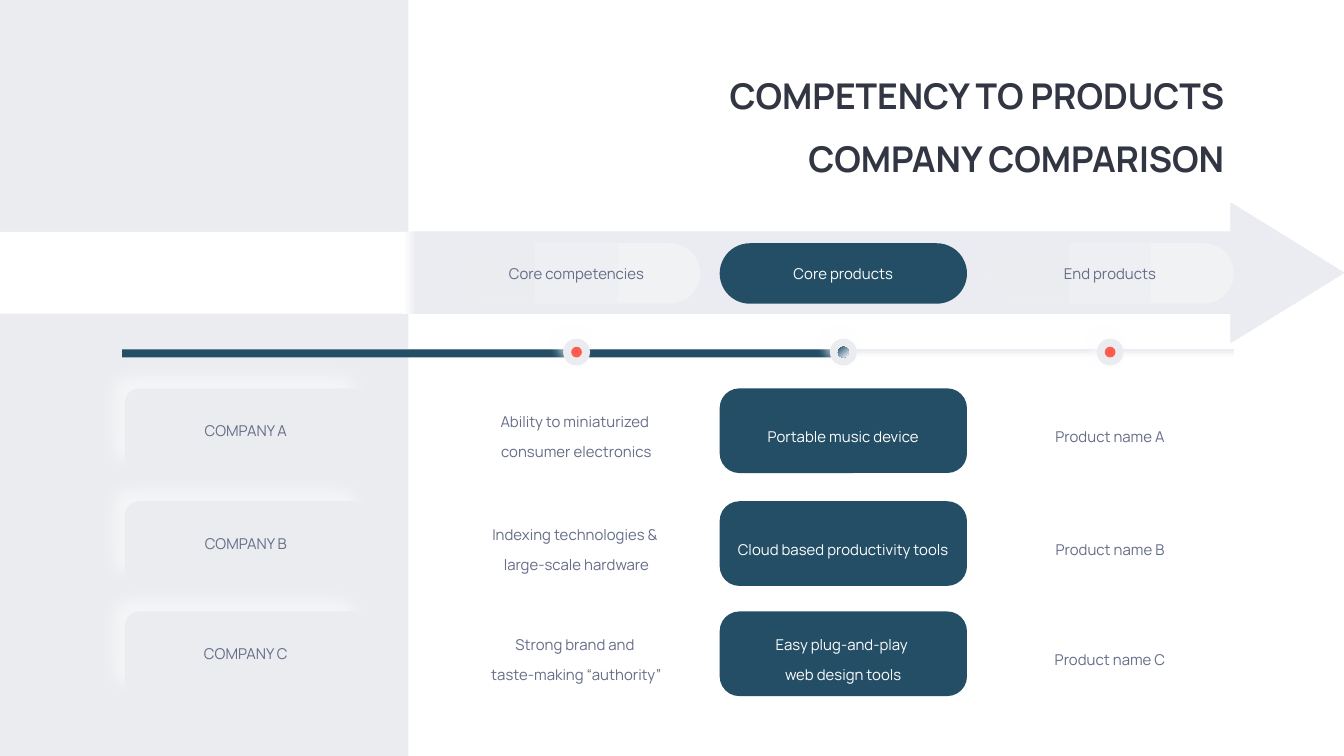
import collections

import lxml.etree
import pptx
import pptx.dml.color
import pptx.enum.shapes
import pptx.enum.text
import pptx.oxml.ns
import pptx.util

Box = collections.namedtuple("Box", "left top width height")
SHAPE = pptx.enum.shapes.MSO_SHAPE
ALIGN = pptx.enum.text.PP_ALIGN
ANCHOR = pptx.enum.text.MSO_ANCHOR
qn = pptx.oxml.ns.qn

FONT = "Manrope"
WHITE, GREY, PALE = "FFFFFF", "EBECF0", "F1F2F4"
NAVY, CORAL, SLATE, INK = "234E65", "FF5C4D", "656C87", "323643"

SLIDE = Box(0, 0, 10, 10 * 9 / 16)
COLUMN_LEFT, COLUMN_STEP, COLUMN_WIDTH = 3.37, 1.985, 1.84
ROW_TOPS, ROW_HEIGHT = (2.89, 3.73, 4.55), 0.63
HIGHLIGHT = 1
RIGHT = 9.18

STAGES = ("Core competencies", "Core products", "End products")
COMPANIES = {
    "COMPANY A": ("Ability to miniaturized \nconsumer electronics",
                  "Portable music device", "Product name A"),
    "COMPANY B": ("Indexing technologies & \nlarge-scale hardware",
                  "Cloud based productivity tools", "Product name B"),
    "COMPANY C": ("Strong brand and \ntaste-making “authority”",
                  "Easy plug-and-play \nweb design tools", "Product name C"),
}


def rgb(color):
    return pptx.dml.color.RGBColor.from_string(color)


def inches(box):
    return [pptx.util.Inches(value) for value in box]


def column_box(index, top, height):
    return Box(COLUMN_LEFT + index * COLUMN_STEP, top, COLUMN_WIDTH, height)


def add_form(shapes, kind, box, color=None, adjustments=()):
    form = shapes.add_shape(kind, *inches(box))
    form.shadow.inherit = False
    form.line.fill.background()
    if color:
        form.fill.solid()
        form.fill.fore_color.rgb = rgb(color)
    for index, value in enumerate(adjustments):
        form.adjustments[index] = value
    return form


def fill_gradient(form, stops, angle):
    """Fill with (percent, colour) stops; the angle runs clockwise."""
    form.fill.gradient()
    gradient = form._element.spPr.find(qn("a:gradFill"))
    stop_list = gradient.find(qn("a:gsLst"))
    for stop in list(stop_list):
        stop_list.remove(stop)
    for percent, color in stops:
        stop = lxml.etree.SubElement(stop_list, qn("a:gs"), pos=str(percent * 1000))
        lxml.etree.SubElement(stop, qn("a:srgbClr"), val=color)
    gradient.find(qn("a:lin")).set("ang", str(angle * 60000))


def add_glow(form, blur, distance):
    """Cast a white shadow towards the upper left."""
    effects = form._element.spPr.find(qn("a:effectLst"))
    shadow = lxml.etree.SubElement(
        effects, qn("a:outerShdw"), blurRad=str(pptx.util.Pt(blur)),
        dist=str(pptx.util.Pt(distance)), dir=str(225 * 60000),
        algn="br", rotWithShape="0")
    color = lxml.etree.SubElement(shadow, qn("a:srgbClr"), val=WHITE)
    lxml.etree.SubElement(color, qn("a:alpha"), val="56000")


def write(form, text, color, size=8, align=ALIGN.CENTER, spacing=None,
          bold=False, anchor=ANCHOR.MIDDLE):
    frame = form.text_frame
    frame.text = text
    frame.word_wrap = True
    frame.vertical_anchor = anchor
    frame.margin_left = frame.margin_right = pptx.util.Inches(0.07)
    frame.margin_top = frame.margin_bottom = pptx.util.Inches(0.04)
    for paragraph in frame.paragraphs:
        paragraph.alignment = align
        paragraph.line_spacing = spacing
        for span in paragraph.runs:
            span.font.name = FONT
            span.font.size = pptx.util.Pt(size)
            span.font.bold = bold
            span.font.color.rgb = rgb(color)


def add_title(page, box):
    title = page.shapes.add_textbox(*inches(box))
    write(title, "COMPETENCY TO PRODUCTS COMPANY COMPARISON", INK, size=19,
          align=ALIGN.RIGHT, spacing=1.5, bold=True, anchor=ANCHOR.TOP)


def add_stage_arrow(page, box):
    arrow = add_form(page.shapes, SHAPE.RIGHT_ARROW, box, adjustments=(0.585, 0.809))
    fill_gradient(arrow, [(0, WHITE), (30, WHITE), (31, "EBECF1"), (100, "EBECF1")], 0)
    height = 0.45
    top = box.top + (box.height - height) / 2 + 0.005
    for index, stage in enumerate(STAGES):
        pill = add_form(page.shapes, SHAPE.ROUNDED_RECTANGLE,
                        column_box(index, top, height), NAVY, (0.5,))
        if index != HIGHLIGHT:
            fill_gradient(pill, [(0, PALE), (100, GREY)], 180)
        write(pill, stage, WHITE if index == HIGHLIGHT else SLATE)


def add_marker(page, center, middle, current):
    group = page.shapes.add_group_shape()
    ring, dot = [
        add_form(group.shapes, SHAPE.OVAL,
                 Box(center - size / 2, middle - size / 2, size, size), color)
        for size, color in ((0.2, GREY), (0.08, CORAL))]
    add_glow(ring, 5, 4)
    if current:
        fill_gradient(dot, [(0, NAVY), (89, "DAE5F1"), (100, "DAE5F1")], 50)


def add_timeline(page, box):
    track = add_form(page.shapes, SHAPE.RECTANGLE, box)
    fill_gradient(track, [(0, WHITE), (100, GREY)], 270)
    add_form(page.shapes, SHAPE.RECTANGLE, box._replace(width=5.4), NAVY)
    for index in range(len(STAGES)):
        cell = column_box(index, box.top, box.height)
        add_marker(page, cell.left + cell.width / 2, box.top + box.height / 2 - 0.01,
                   index == HIGHLIGHT)


def add_company_row(page, box, company, entries):
    for index, entry in enumerate(entries):
        marked = index == HIGHLIGHT
        card = add_form(page.shapes, SHAPE.ROUNDED_RECTANGLE,
                        column_box(index, box.top, box.height),
                        NAVY if marked else WHITE, (0.232,))
        write(card, entry, WHITE if marked else SLATE, spacing=1.66)
    label = add_form(page.shapes, SHAPE.ROUNDED_RECTANGLE,
                     box._replace(width=1.8), GREY, (0.167,))
    add_glow(label, 9, 9)
    write(label, company, SLATE)


def main():
    deck = pptx.Presentation()
    deck.slide_width, deck.slide_height = inches(SLIDE)[2:]
    page = deck.slides.add_slide(deck.slide_layouts[6])
    add_form(page.shapes, SHAPE.RECTANGLE, SLIDE._replace(width=3.04), GREY)
    add_stage_arrow(page, Box(0, 1.51, SLIDE.width, 1.04))
    for top, (company, entries) in zip(ROW_TOPS, COMPANIES.items()):
        add_company_row(page, Box(0.93, top, RIGHT - 0.93, ROW_HEIGHT), company, entries)
    add_timeline(page, Box(0.91, 2.6, RIGHT - 0.91, 0.06))
    add_title(page, Box(5.1, 0.35, RIGHT - 5.1, 0.88))
    deck.save("out.pptx")


if __name__ == "__main__":
    main()
